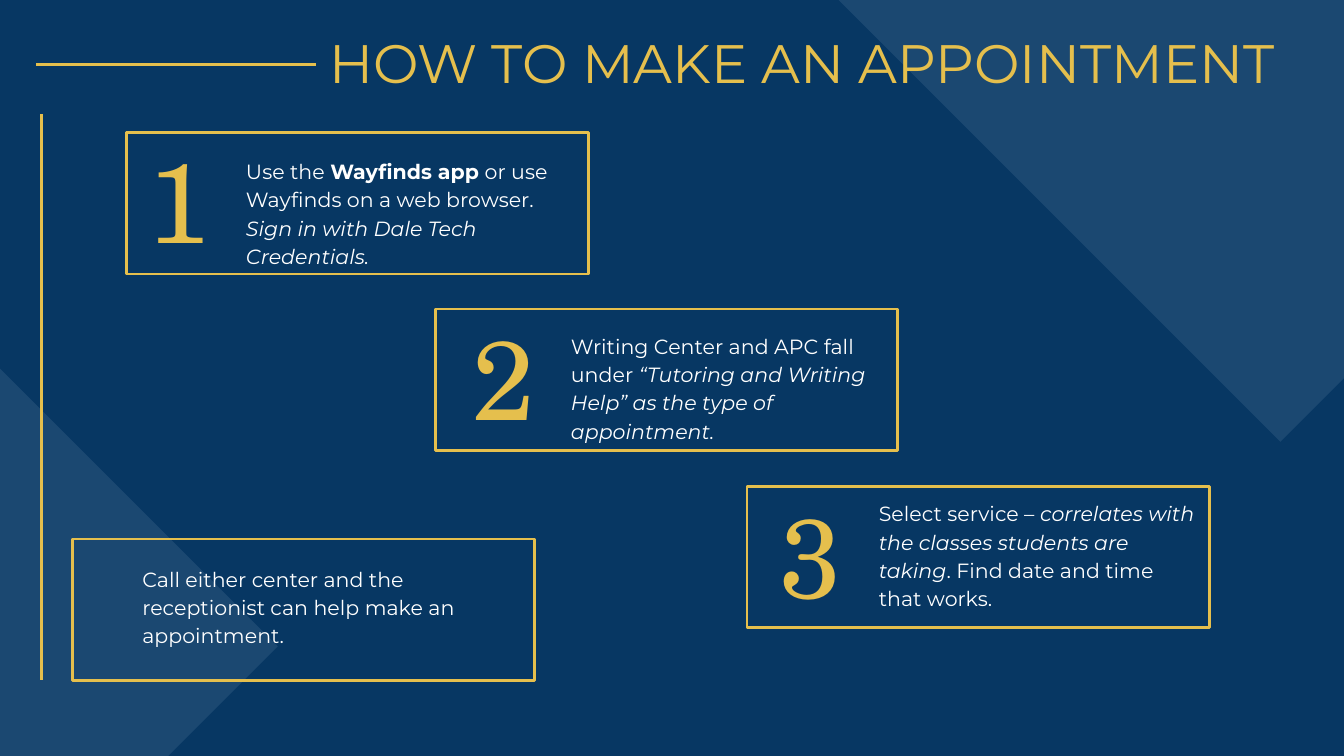
from lxml.etree import SubElement
from pptx import Presentation
from pptx.dml.color import RGBColor
from pptx.enum.shapes import MSO_CONNECTOR, MSO_SHAPE
from pptx.enum.text import MSO_ANCHOR, MSO_AUTO_SIZE, PP_ALIGN
from pptx.oxml.ns import qn
from pptx.util import Cm, Pt

NAVY, PALE, GOLD, WHITE = "073763", "CFE2F3", "E5BF4D", "FFFFFF"
SANS, SERIF = "Montserrat", "TeX Gyre Schola"
CARD_WIDTH, CARD_HEIGHT = 8.74, 2.67
DIAMOND_SIZE = 23.72

STEPS = [
    ((2.39, 2.51), "1", (-0.05, 0.08), (2.01, 0.18),
     [("Use the ", ""), ("Wayfinds app", "bold"),
      (" or use Wayfinds on a web browser. ", ""),
      ("Sign in with Dale Tech Credentials.", "italic")]),
    ((8.23, 5.84), "2", (0.25, 0.1), (2.31, 0.15),
     [("Writing Center and APC fall under ", ""),
      ("“Tutoring and Writing Help” as the type of appointment.", "italic")]),
    ((14.12, 9.19), "3", (0.18, 0.1), (2.24, -0.03),
     [("Select service – ", ""),
      ("correlates with the classes students are taking", "italic"),
      (". Find date and time that works.", "")]),
    ((1.37, 10.19), "", (0, 0), (1.07, 0.2),
     [("Call either center and the receptionist can help make an appointment.", "")]),
]


def color(hex_string):
    return RGBColor.from_string(hex_string)


def place(shape, left, top, width, height):
    shape.left, shape.top = Cm(left), Cm(top)
    shape.width, shape.height = Cm(width), Cm(height)


def write(shape, runs, size, font_name, font_color,
          alignment=PP_ALIGN.LEFT, anchor=MSO_ANCHOR.TOP, line_spacing=1.0):
    frame = shape.text_frame
    frame.word_wrap = True
    frame.auto_size = MSO_AUTO_SIZE.NONE
    frame.vertical_anchor = anchor
    frame.margin_left = frame.margin_right = Cm(0.25)
    frame.margin_top = frame.margin_bottom = Cm(0.25)
    paragraph = frame.paragraphs[0]
    paragraph.alignment = alignment
    paragraph.line_spacing = line_spacing
    for text, style in runs:
        run = paragraph.add_run()
        run.text = text
        run.font.size = Pt(size)
        run.font.name = font_name
        run.font.color.rgb = color(font_color)
        run.font.bold = style == "bold"
        run.font.italic = style == "italic"


def add_text(slide, left, top, width, height, runs, *style, **options):
    box = slide.shapes.add_textbox(Cm(left), Cm(top), Cm(width), Cm(height))
    write(box, runs, *style, **options)


def add_rule(slide, start_x, start_y, end_x, end_y):
    rule = slide.shapes.add_connector(
        MSO_CONNECTOR.STRAIGHT, Cm(start_x), Cm(start_y), Cm(end_x), Cm(end_y))
    rule.line.color.rgb = color(GOLD)
    rule.line.width = Pt(1.5)
    SubElement(rule._element.spPr, qn("a:effectLst"))
    return rule


def add_backdrop_diamond(slide, left, top, size):
    diamond = slide.shapes.add_shape(
        MSO_SHAPE.DIAMOND, Cm(left), Cm(top), Cm(size), Cm(size))
    diamond.shadow.inherit = False
    diamond.line.fill.background()
    diamond.fill.solid()
    diamond.fill.fore_color.rgb = color(PALE)
    fill_color = diamond._element.spPr.find(f".//{qn('a:srgbClr')}")
    SubElement(fill_color, qn("a:alpha"), val="10000")


def add_heading(slide, left, top, width, height):
    title = slide.shapes.title
    place(title, left, top, width, height)
    write(title, [("HOW TO MAKE AN APPOINTMENT", "")], 29, SANS, GOLD)
    rule = add_rule(slide, left, top + height / 2, 0.69, top + height / 2)
    rule.begin_connect(title, 1)


def add_card(slide, left, top, width, height, number, number_offset, text_offset, runs):
    card = slide.shapes.add_shape(
        MSO_SHAPE.RECTANGLE, Cm(left), Cm(top), Cm(width), Cm(height))
    card.shadow.inherit = False
    card.fill.background()
    card.line.color.rgb = color(GOLD)
    card.line.width = Pt(1.5)
    add_text(slide, left + text_offset[0], top + text_offset[1], 6.58, 1.83,
             runs, 11, SANS, WHITE, line_spacing=1.15)
    if number:
        add_text(slide, left + number_offset[0], top + number_offset[1], 2.06, 2.34,
                 [(number, "")], 60, SERIF, GOLD,
                 alignment=PP_ALIGN.CENTER, anchor=MSO_ANCHOR.MIDDLE)


def main():
    presentation = Presentation()
    presentation.slide_width, presentation.slide_height = Cm(25.4), Cm(14.29)
    slide = presentation.slides.add_slide(presentation.slide_layouts[5])
    slide.background.fill.solid()
    slide.background.fill.fore_color.rgb = color(NAVY)

    add_backdrop_diamond(slide, 12.34, -15.37, DIAMOND_SIZE)
    add_backdrop_diamond(slide, -18.47, 0.36, DIAMOND_SIZE)
    add_heading(slide, 5.97, 0.3, 19.05, 1.83)
    add_rule(slide, 0.79, 2.16, 0.79, 12.85)
    for (left, top), *content in STEPS:
        add_card(slide, left, top, CARD_WIDTH, CARD_HEIGHT, *content)
    slide.shapes._spTree.append(slide.shapes.title._element)

    presentation.save("out.pptx")


if __name__ == "__main__":
    main()
